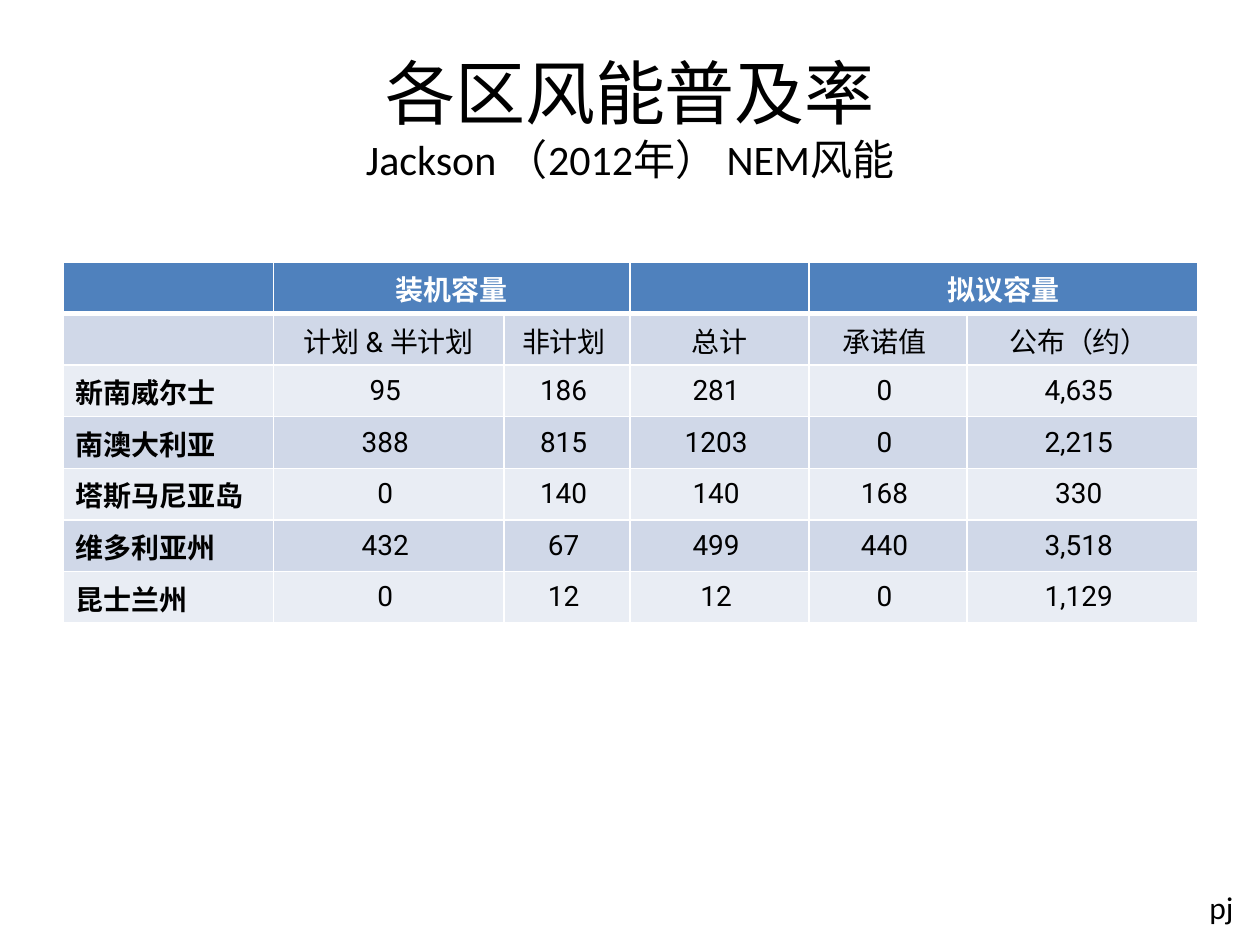
from copy import deepcopy
from dataclasses import dataclass

from lxml.etree import fromstring
from pptx import Presentation
from pptx.dml.color import RGBColor
from pptx.enum.text import MSO_ANCHOR, PP_ALIGN
from pptx.oxml.ns import nsdecls
from pptx.util import Cm, Pt

BLUE, DARK, LIGHT = "4F81BD", "D0D8E8", "E9EDF4"
BLACK, WHITE = "000000", "FFFFFF"
WIDTHS = (4.24, 4.65, 2.54, 3.61, 3.18, 4.65)
ROW = 1.04


@dataclass
class Style:
    size: int
    face: str = "Calibri"
    color: str = BLACK
    bold: bool = False
    align: PP_ALIGN = PP_ALIGN.CENTER
    anchor: MSO_ANCHOR = MSO_ANCHOR.MIDDLE


@dataclass
class Region:
    name: str
    values: tuple


HEAD = Style(16, color=WHITE, bold=True, anchor=MSO_ANCHOR.TOP)
NAME = Style(16, "Arial", bold=True, align=PP_ALIGN.LEFT)
BODY = Style(16, "Roboto")

GROUPS = {1: "装机容量", 4: "拟议容量"}
LABELS = ("", " 计划 & 半计划 ", "非计划 ", "总计", "承诺值 ", "公布（约） ")
REGIONS = (
    Region("新南威尔士", ("95", "186", "281", "0", "4,635")),
    Region("南澳大利亚", ("388", "815", "1203", "0", "2,215")),
    Region("塔斯马尼亚岛", ("0", "140", "140", "168", "330")),
    Region("维多利亚州", ("432", "67", "499", "440", "3,518")),
    Region("昆士兰州", ("0", "12", "12", "0", "1,129")),
)


def rgb(code: str) -> RGBColor:
    return RGBColor.from_string(code)


def write(para, text: str, style: Style):
    """Add a styled run and align its paragraph."""
    para.alignment = style.align
    run = para.add_run()
    run.text = text
    looks = {"size": Pt(style.size), "name": style.face, "bold": style.bold}
    for key, value in looks.items():
        setattr(run.font, key, value)
    run.font.color.rgb = rgb(style.color)
    return run


def edge(cell, top: int, base: int) -> None:
    """Draw white borders, with top and base widths in points."""
    sides = {"L": 1, "R": 1, "T": top, "B": base}
    props = cell._tc.get_or_add_tcPr()
    for spot, (side, width) in enumerate(sides.items()):
        props.insert(spot, fromstring(
            f'<a:ln{side} {nsdecls("a")} w="{Pt(width)}"><a:solidFill>'
            f'<a:srgbClr val="{WHITE}"/></a:solidFill></a:ln{side}>'))


def draw_row(table, row: int, texts, fill: str, styles) -> None:
    for col, (text, style) in enumerate(zip(texts, styles)):
        cell = table.cell(row, col)
        cell.fill.solid()
        cell.fill.fore_color.rgb = rgb(fill)
        cell.vertical_anchor = style.anchor
        edge(cell, 3 if row == 1 else 1, 3 if row == 0 else 1)
        if text:
            write(cell.text_frame.paragraphs[0], text, style)


def draw_title(slide) -> None:
    title = slide.shapes.title
    place = {"left": 1.27, "top": 0.76, "width": 22.86, "height": 3.18}
    for key, value in place.items():
        setattr(title, key, Cm(value))
    title.text_frame.vertical_anchor = MSO_ANCHOR.MIDDLE
    para = title.text_frame.paragraphs[0]
    run = write(para, "各区风能普及率", Style(40))
    para.add_line_break()
    para._p[-1].append(deepcopy(run._r.rPr))  # the break keeps the title size
    write(para, "Jackson （2012年） NEM风能", Style(24))


def draw_table(slide) -> None:
    count = len(REGIONS) + 2
    table = slide.shapes.add_table(
        count, len(WIDTHS), Cm(1.27), Cm(5.28),
        Cm(sum(WIDTHS)), Cm(ROW * count)).table
    for col, width in zip(table.columns, WIDTHS):
        col.width = Cm(width)
    for row in table.rows:
        row.height = Cm(ROW)

    cols = range(len(WIDTHS))
    draw_row(table, 0, [GROUPS.get(c, "") for c in cols], BLUE, [HEAD] * len(cols))
    for col in GROUPS:
        table.cell(0, col).merge(table.cell(0, col + 1))
    draw_row(table, 1, LABELS, DARK, [BODY] * len(cols))
    for row, region in enumerate(REGIONS, 2):
        texts = [region.name] + [f"{value} " for value in region.values]
        fill = DARK if row % 2 else LIGHT
        draw_row(table, row, texts, fill, [NAME] + [BODY] * len(region.values))


def draw_mark(slide) -> None:
    box = slide.shapes.add_textbox(Cm(24.13), Cm(17.78), Cm(1.07), Cm(1.07))
    box.text_frame.word_wrap = False
    write(box.text_frame.paragraphs[0], "pj", Style(18, align=PP_ALIGN.LEFT))


def main() -> None:
    deck = Presentation()
    deck.slide_width, deck.slide_height = Cm(25.4), Cm(19.05)
    slide = deck.slides.add_slide(deck.slide_layouts[5])
    draw_mark(slide)
    draw_title(slide)
    draw_table(slide)
    deck.save("out.pptx")


if __name__ == "__main__":
    main()
